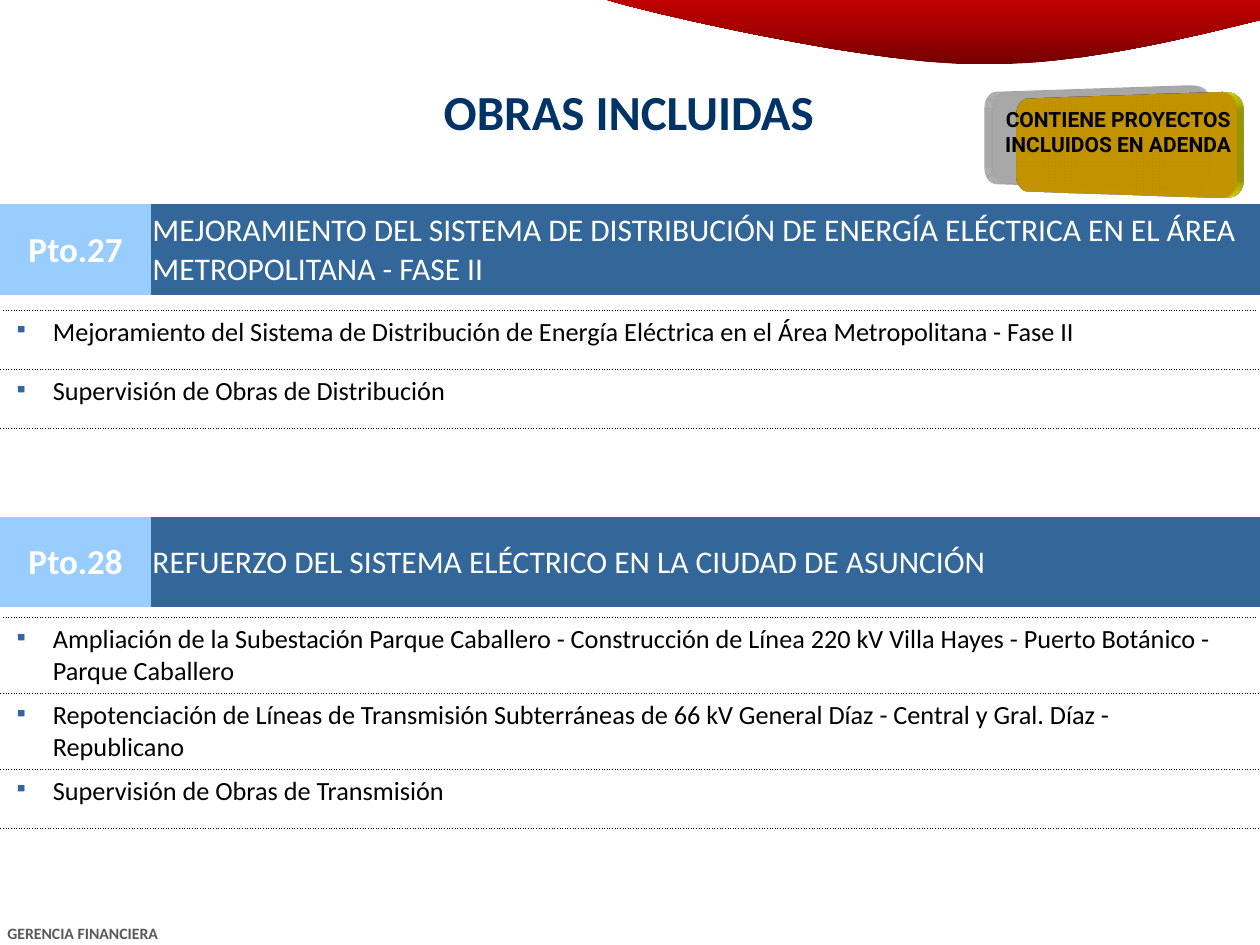
from dataclasses import dataclass

from pptx import Presentation
from pptx.dml.color import RGBColor
from pptx.enum.shapes import MSO_SHAPE as Shape
from pptx.enum.text import MSO_ANCHOR as Anchor, MSO_AUTO_SIZE as Fit, PP_ALIGN as Align
from pptx.oxml import parse_xml
from pptx.oxml.ns import qn
from pptx.util import Inches, Pt

WHITE = RGBColor(0xFF, 0xFF, 0xFF)
BLACK = RGBColor(0, 0, 0)
NAVY = RGBColor(0x00, 0x33, 0x66)
BLUE = RGBColor(0x33, 0x66, 0x99)
SKY = RGBColor(0x99, 0xCC, 0xFF)
GRAY = RGBColor(0x59, 0x59, 0x59)
GOLD = RGBColor(0xFF, 0xC0, 0x00)
YELLOW = RGBColor(0xFF, 0xFF, 0x00)
REDS = {0: RGBColor(0x72, 0, 0), 50: RGBColor(0xA2, 0, 0), 100: RGBColor(0xC0, 0, 0)}

NS = 'xmlns:a="http://schemas.openxmlformats.org/drawingml/2006/main"'
PLAIN = "{2D5ABB26-0587-4C30-8999-92F81FD0307C}"
ROW = 0.47
HANG = Inches(0.31)
UNITS = 1000  # outline units to the inch


@dataclass
class Point:
    """A numbered heading bar and the works listed under it."""
    code: str
    name: str
    top: float
    list_top: float
    works: list[str]


POINTS = [
    Point("Pto.27",
          "MEJORAMIENTO DEL SISTEMA DE DISTRIBUCIÓN DE ENERGÍA ELÉCTRICA EN EL ÁREA "
          "METROPOLITANA - FASE II", 1.62, 2.46,
          ["Mejoramiento del Sistema de Distribución de Energía Eléctrica en el Área "
           "Metropolitana - Fase II",
           "Supervisión de Obras de Distribución"]),
    Point("Pto.28", "REFUERZO DEL SISTEMA ELÉCTRICO EN LA CIUDAD DE ASUNCIÓN", 4.1, 4.9,
          ["Ampliación de la Subestación Parque Caballero - Construcción de Línea 220 kV "
           "Villa Hayes - Puerto Botánico - Parque Caballero",
           "Repotenciación de Líneas de Transmisión Subterráneas de 66 kV General Díaz - "
           "Central y Gral. Díaz - Republicano",
           "Supervisión de Obras de Transmisión"]),
]


def write(frame, text: str, size: float, color=BLACK, bold=False, font="Calibri",
          align=Align.LEFT, bullet=False) -> None:
    """Put one formatted paragraph into a text frame."""
    frame.word_wrap = True
    para = frame.paragraphs[0]
    para.alignment = align
    if bullet:
        props = para._p.get_or_add_pPr()
        props.set("marL", str(HANG))
        props.set("indent", str(-HANG))
        props.append(parse_xml(f'<a:buClr {NS}><a:srgbClr val="{BLUE}"/></a:buClr>'))
        props.append(parse_xml(f'<a:buSzPct {NS} val="75000"/>'))
        props.append(parse_xml(f'<a:buChar {NS} char="▪"/>'))
    run = para.add_run()
    run.text = text
    run.font.name, run.font.size, run.font.bold = font, Pt(size), bold
    run.font.color.rgb = color


def grid(slide, top: float, left: float, cols: list[float], rows: int, height: float):
    """Add an unstyled table."""
    table = slide.shapes.add_table(rows, len(cols), Inches(left), Inches(top),
                                   Inches(sum(cols)), Inches(rows * height)).table
    table.first_row = table.horz_banding = False
    table._tbl.tblPr.find(qn("a:tableStyleId")).text = PLAIN
    for col, width in zip(table.columns, cols):
        col.width = Inches(width)
    return table


def edge(cell) -> None:
    """White sides, dotted black top and bottom."""
    props = cell._tc.get_or_add_tcPr()
    sides = [("L", WHITE, 1, "solid"), ("R", WHITE, 1, "solid"),
             ("T", BLACK, 0.25, "sysDot"), ("B", BLACK, 0.25, "sysDot")]
    for spot, (side, color, width, dash) in enumerate(sides):
        props.insert(spot, parse_xml(
            f'<a:ln{side} {NS} w="{Pt(width)}"><a:solidFill><a:srgbClr val="{color}"/>'
            f'</a:solidFill><a:prstDash val="{dash}"/></a:ln{side}>'))


def header(slide, point: Point) -> None:
    table = grid(slide, point.top, 0, [1.2, 8.8], 1, 0.72)
    parts = [(point.code, SKY, 20, True, Align.CENTER),
             (point.name, BLUE, 18, False, Align.LEFT)]
    for cell, (text, fill, size, bold, align) in zip(table.rows[0].cells, parts):
        cell.fill.solid()
        cell.fill.fore_color.rgb = fill
        cell.vertical_anchor = Anchor.MIDDLE
        cell.margin_left = cell.margin_right = cell.margin_top = Inches(0.01)
        cell.margin_bottom = 0
        write(cell.text_frame, text, size, WHITE, bold, align=align)


def listing(slide, point: Point) -> None:
    table = grid(slide, point.list_top, 0.01, [9.98], len(point.works), ROW)
    for cell, work in zip(table.iter_cells(), point.works):
        cell.fill.background()
        edge(cell)
        write(cell.text_frame, work, 15, bullet=True)


def curve(a: tuple, b: tuple, c: tuple, d: tuple, steps: int = 24) -> list[tuple]:
    """Points along a cubic curve, without its start."""
    spots = []
    for t in (i / steps for i in range(1, steps + 1)):
        u = 1 - t
        spots.append(tuple(u**3 * p + 3 * u * u * t * q + 3 * u * t * t * r + t**3 * s
                           for p, q, r, s in zip(a, b, c, d)))
    return spots


def banner(slide) -> None:
    """Red arc along the top edge."""
    start, low, end = (4.79, -0.01), (7.69, 0.51), (10, 0.16)
    spots = ([start] + curve(start, (5.09, 0.09), (6.82, 0.49), low)
             + curve(low, (8.56, 0.54), (9.61, 0.25), end) + [(10, 0)])
    first, *rest = [(x * UNITS, y * UNITS) for x, y in spots]
    path = slide.shapes.build_freeform(*first, scale=Inches(1) / UNITS)
    path.add_line_segments(rest, close=True)
    shape = path.convert_to_shape()
    shape.shadow.inherit = False
    shape.line.fill.background()
    stops = "".join(f'<a:gs pos="{at * 1000}"><a:srgbClr val="{color}"/></a:gs>'
                    for at, color in REDS.items())
    shape._element.spPr.find(qn("a:custGeom")).addnext(parse_xml(
        f'<a:gradFill {NS}><a:gsLst>{stops}</a:gsLst><a:lin ang="16200000"/></a:gradFill>'))


def badge(slide, text: str) -> None:
    """Gold tag turned in perspective, with a yellow edge."""
    shape = slide.shapes.add_shape(Shape.FLOWCHART_ALTERNATE_PROCESS,
                                   *map(Inches, (7.83, 0.76, 2.09, 0.78)))
    shape.fill.solid()
    shape.fill.fore_color.rgb = GOLD
    shape.line.fill.background()
    shape.shadow.inherit = False
    props = shape._element.spPr
    props.find(qn("a:effectLst")).append(parse_xml(
        f'<a:outerShdw {NS} blurRad="{Pt(14.5)}" dist="{Pt(19)}" dir="11520000">'
        f'<a:srgbClr val="{BLACK}"><a:alpha val="18000"/></a:srgbClr></a:outerShdw>'))
    props.append(parse_xml(
        f'<a:scene3d {NS}><a:camera prst="perspectiveFront" fov="4800000">'
        '<a:rot lat="0" lon="2040000" rev="0"/></a:camera>'
        '<a:lightRig rig="legacyFlat3" dir="r"/></a:scene3d>'))
    props.append(parse_xml(
        f'<a:sp3d {NS} extrusionH="{Pt(8)}" prstMaterial="legacyMatte"><a:extrusionClr>'
        f'<a:srgbClr val="{YELLOW}"/></a:extrusionClr></a:sp3d>'))
    shape.text_frame.vertical_anchor = Anchor.TOP
    write(shape.text_frame, text, 12, bold=True, font="Roboto", align=Align.CENTER)


def main() -> None:
    deck = Presentation()
    deck.slide_width, deck.slide_height = Inches(10), Inches(7.5)
    slide = deck.slides.add_slide(deck.slide_layouts[5])

    # Frame of the page
    banner(slide)
    foot = slide.shapes.add_textbox(*map(Inches, (-0.04, 7.28, 3.46, 0.25)))
    write(foot.text_frame, "GERENCIA FINANCIERA", 9, GRAY, True)

    # Title
    title = slide.shapes.title
    title.left, title.top, title.width, title.height = map(Inches, (0, 0.6, 9.98, 0.55))
    frame = title.text_frame
    frame.auto_size, frame.vertical_anchor = Fit.NONE, Anchor.TOP
    write(frame, "OBRAS INCLUIDAS", 28, NAVY, True, align=Align.CENTER)

    # Points and their works
    for point in POINTS:
        header(slide, point)
        listing(slide, point)

    badge(slide, "CONTIENE PROYECTOS INCLUIDOS EN ADENDA")
    deck.save("out.pptx")


if __name__ == "__main__":
    main()
